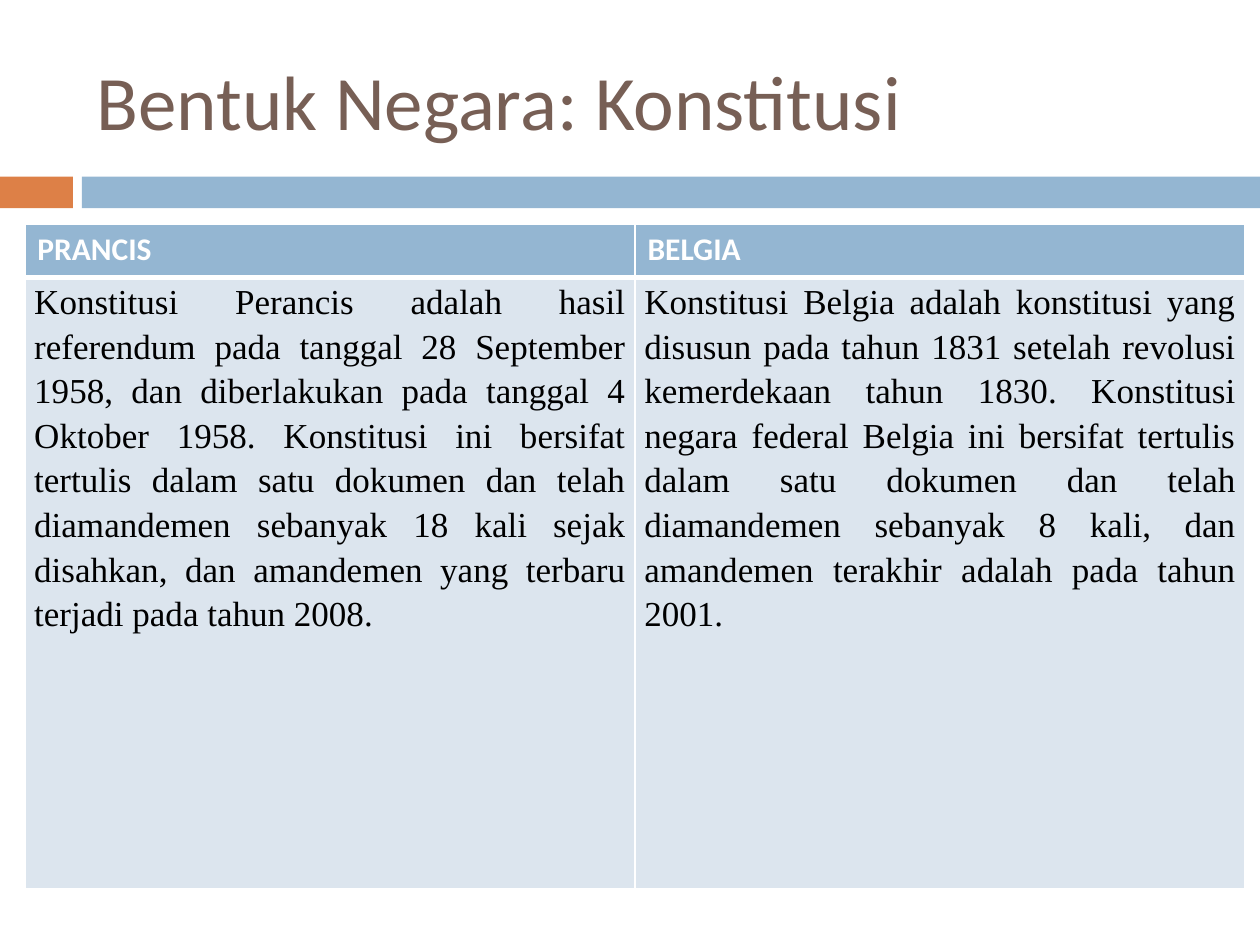
from lxml.etree import SubElement
from pptx import Presentation
from pptx.dml.color import RGBColor
from pptx.enum.shapes import MSO_SHAPE
from pptx.enum.text import MSO_ANCHOR, PP_ALIGN
from pptx.oxml.ns import qn
from pptx.util import Cm, Pt

COLORS = {
    "white": "FFFFFF",
    "black": "000000",
    "brown": "775F55",
    "orange": "DD8047",
    "blue": "94B6D2",
    "pale": "DCE5EE",
}
CONSTITUTIONS = {
    "PRANCIS": "Konstitusi Perancis adalah hasil referendum pada tanggal 28 September 1958, "
               "dan diberlakukan pada tanggal 4 Oktober 1958. Konstitusi ini bersifat tertulis "
               "dalam satu dokumen dan telah diamandemen sebanyak 18 kali sejak disahkan, dan "
               "amandemen yang terbaru terjadi pada tahun 2008.",
    "BELGIA": "Konstitusi Belgia adalah konstitusi yang disusun pada tahun 1831 setelah "
              "revolusi kemerdekaan tahun 1830. Konstitusi negara federal Belgia ini bersifat "
              "tertulis dalam satu dokumen dan telah diamandemen sebanyak 8 kali, dan "
              "amandemen terakhir adalah pada tahun 2001.",
}


def color(name):
    return RGBColor.from_string(COLORS[name])


def style_font(paragraph, family, size, color_name, bold=False):
    font = paragraph.font
    font.name, font.size, font.bold = family, Pt(size), bold
    font.color.rgb = color(color_name)


def add_title(slide, left, top, width, height):
    title = slide.shapes.title
    title.left, title.top, title.width, title.height = map(Cm, (left, top, width, height))
    frame = title.text_frame
    frame.text = "Bentuk Negara: Konstitusi"
    frame.vertical_anchor = MSO_ANCHOR.MIDDLE
    heading = frame.paragraphs[0]
    heading.alignment = PP_ALIGN.LEFT
    style_font(heading, "Calibri", 44, "brown")


def add_band(slide, left, top, width, height):
    accent_width, gap = 1.47, 0.18
    bar_offset = accent_width + gap
    for offset, length, fill in ((0, accent_width, "orange"),
                                 (bar_offset, width - bar_offset, "blue")):
        bar = slide.shapes.add_shape(MSO_SHAPE.RECTANGLE, Cm(left + offset), Cm(top),
                                     Cm(length), Cm(height))
        bar.shadow.inherit = False
        bar.fill.solid()
        bar.fill.fore_color.rgb = color(fill)
        bar.line.fill.background()


def style_cell(cell, fill, top_border, bottom_border):
    properties = cell._tc.get_or_add_tcPr()
    for side, points in (("L", 1), ("R", 1), ("T", top_border), ("B", bottom_border)):
        border = SubElement(properties, qn(f"a:ln{side}"), w=str(Pt(points)))
        solid = SubElement(border, qn("a:solidFill"))
        SubElement(solid, qn("a:srgbClr"), val=COLORS["white"])
    cell.fill.solid()
    cell.fill.fore_color.rgb = color(fill)


def add_comparison(slide, left, top, width, height):
    header_height = 1.07
    table = slide.shapes.add_table(2, len(CONSTITUTIONS), Cm(left), Cm(top),
                                   Cm(width), Cm(height)).table
    table.rows[0].height = Cm(header_height)
    table.rows[1].height = Cm(height - header_height)
    for column, (country, description) in enumerate(CONSTITUTIONS.items()):
        table.columns[column].width = Cm(width / len(CONSTITUTIONS))

        header = table.cell(0, column)
        header.text = country
        style_cell(header, "blue", 1, 3)
        style_font(header.text_frame.paragraphs[0], "Calibri", 18, "white", bold=True)

        body = table.cell(1, column)
        body.text = description
        body.margin_left = body.margin_right = Cm(0.19)
        body.margin_top = body.margin_bottom = 0
        style_cell(body, "pale", 3, 1)
        paragraph = body.text_frame.paragraphs[0]
        paragraph.alignment = PP_ALIGN.JUSTIFY
        paragraph.line_spacing = 1.15
        style_font(paragraph, "Times New Roman", 20, "black")


def main():
    presentation = Presentation()
    presentation.slide_width, presentation.slide_height = Cm(25.4), Cm(19.05)
    slide = presentation.slides.add_slide(presentation.slide_layouts[5])
    add_band(slide, 0, 3.56, 25.4, 0.64)
    add_title(slide, 1.7, 0.64, 22.66, 2.74)
    add_comparison(slide, 0.5, 4.52, 24.6, 13.4)
    presentation.save("out.pptx")


if __name__ == "__main__":
    main()
